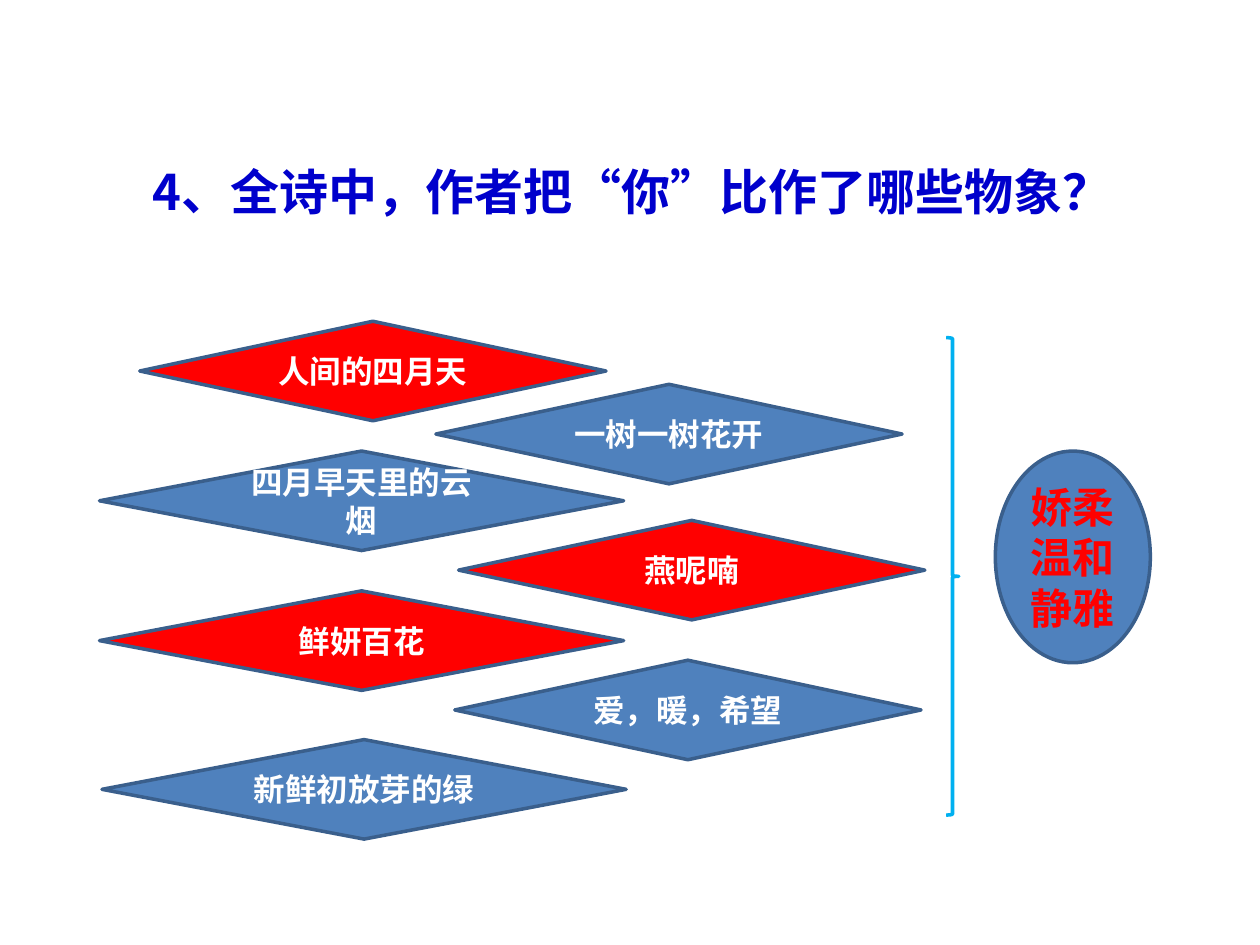
"""Build a slide of the images the poem uses for "you" and the mood they share."""
from lxml import etree
from pptx import Presentation
from pptx import util as u
from pptx.dml.color import RGBColor
from pptx.enum import shapes, text
from pptx.oxml.ns import qn

FONT = "Noto Sans CJK SC"
WHITE = RGBColor(0xFF, 0xFF, 0xFF)
RED = RGBColor(0xFF, 0x00, 0x00)
BLUE = RGBColor(0x4F, 0x81, 0xBD)
EDGE = RGBColor(0x3A, 0x5F, 0x8C)
SKY = RGBColor(0x00, 0xB0, 0xF0)
TITLE_BLUE = RGBColor(0x00, 0x00, 0xCC)

TITLE = "4、全诗中，作者把“你”比作了哪些物象？"
TITLE_BOX = (11.1, 13.33, 79, 10.8)
NARROW, WIDE, DIAMOND_HEIGHT = 37, 41.6, 10.53
IMAGES = [
    ("人间的四月天", 11.1, 34, NARROW, RED),
    ("四月早天里的云烟", 7.9, 47.73, WIDE, BLUE),
    ("鲜妍百花", 7.9, 62.53, WIDE, RED),
    ("新鲜初放芽的绿", 8.1, 78.27, WIDE, BLUE),
    ("一树一树花开", 34.6, 40.67, NARROW, BLUE),
    ("燕呢喃", 36.4, 55.07, NARROW, RED),
    ("爱，暖，希望", 36.1, 69.87, NARROW, BLUE),
]
BRACE_BOX = (75.1, 35.73, 1, 50.53)
MOODS = ["娇柔", "温和", "静雅"]
MOOD_BOX = (79, 47.73, 12.3, 22.4)

prs = Presentation()
prs.slide_width, prs.slide_height = u.Inches(10), u.Inches(7.5)
slide = prs.slides.add_slide(prs.slide_layouts[5])


def place(box):
    """Turn percentages of the slide into lengths."""
    sides = (prs.slide_width, prs.slide_height) * 2
    return [int(side * share / 100) for side, share in zip(sides, box)]


def write(sp, lines, size, color, align, anchor):
    """Write one bold paragraph per line."""
    tf = sp.text_frame
    tf.word_wrap = True
    tf.vertical_anchor = anchor
    for i, line in enumerate(lines):
        p = tf.add_paragraph() if i else tf.paragraphs[0]
        p.alignment = align
        r = p.add_run()
        r.text = line
        r.font.size, r.font.bold, r.font.name = u.Pt(size), True, FONT
        r.font.color.rgb = color
        etree.SubElement(r.font._element, qn("a:ea")).set("typeface", FONT)


def add_outlined(kind, box, edge, fill=None):
    """Add a preset shape with a 2 pt outline."""
    sp = slide.shapes.add_shape(kind, *place(box))
    sp.shadow.inherit = False
    sp.line.color.rgb, sp.line.width = edge, u.Pt(2)
    if fill is None:
        sp.fill.background()
    else:
        sp.fill.solid()
        sp.fill.fore_color.rgb = fill
    return sp


def add_label(kind, box, fill, lines, size, color):
    """Add a filled shape with centred text."""
    sp = add_outlined(kind, box, EDGE, fill)
    write(sp, lines, size, color, text.PP_ALIGN.CENTER, text.MSO_ANCHOR.MIDDLE)


title = slide.shapes.title
title.left, title.top, title.width, title.height = place(TITLE_BOX)
title.fill.solid()
title.fill.fore_color.rgb = WHITE
color_xml = title._element.spPr.find(".//" + qn("a:srgbClr"))
etree.SubElement(color_xml, qn("a:alpha")).set("val", "26000")
write(title, [TITLE], 28, TITLE_BLUE, text.PP_ALIGN.LEFT, text.MSO_ANCHOR.TOP)
title.text_frame.auto_size = text.MSO_AUTO_SIZE.SHAPE_TO_FIT_TEXT
title.text_frame.paragraphs[0].line_spacing = 1.5

for phrase, left, top, width, fill in IMAGES:
    add_label(shapes.MSO_SHAPE.FLOWCHART_DECISION, (left, top, width, DIAMOND_HEIGHT),
              fill, [phrase], 18, WHITE)
add_outlined(shapes.MSO_SHAPE.RIGHT_BRACE, BRACE_BOX, SKY)
add_label(shapes.MSO_SHAPE.OVAL, MOOD_BOX, BLUE, MOODS, 24, RED)

prs.save("out.pptx")
